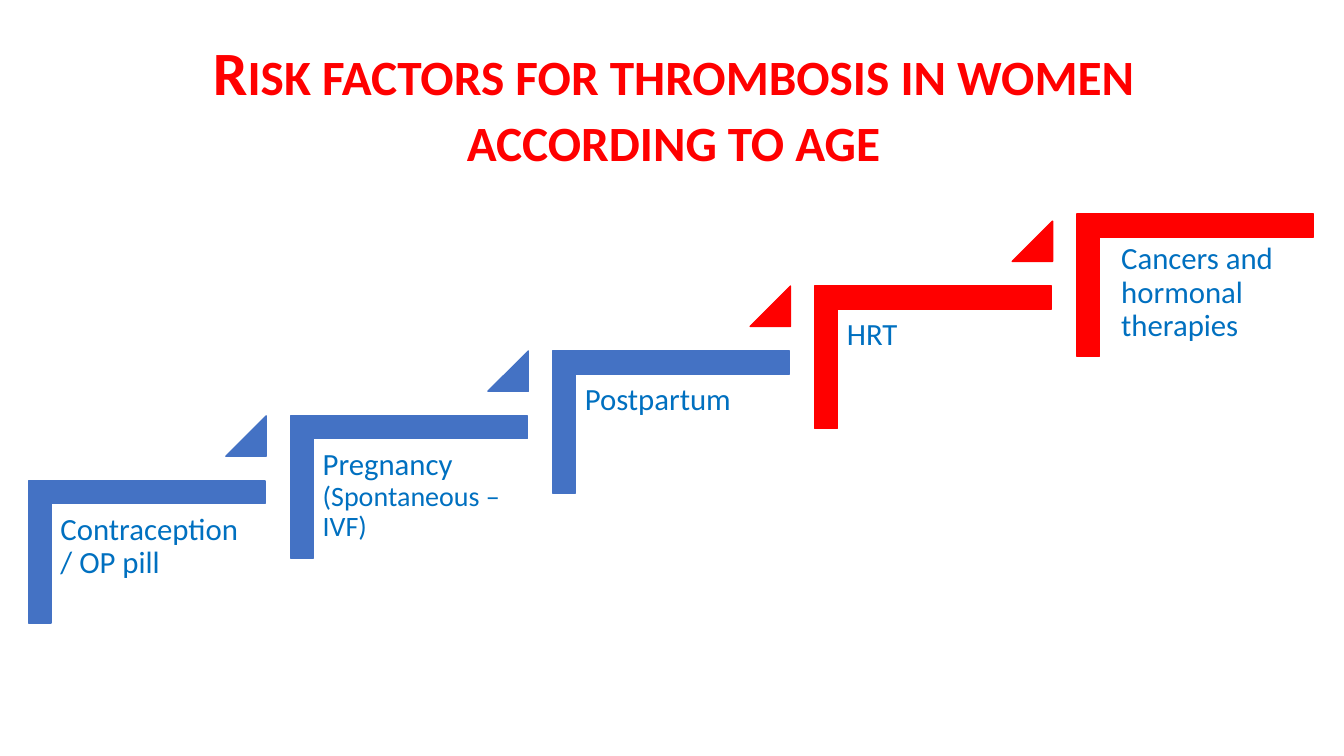
from pptx import Presentation
from pptx import util as u
from pptx.dml.color import RGBColor
from pptx.enum import shapes, text

RED, BLUE, LABEL = "FF0000", "4472C4", "0070C0"
STEP_W, STEP_H = 2.35, 1.41
COLUMN, RISE = 2.6, 0.644
LEFT, BOTTOM_STEP_TOP = 0.28, 4.77

# Label runs (text, size), step colour, colour of the triangle leading up
STEPS = [
    ([("Contraception / OP pill", 22)], BLUE, BLUE),
    ([("Pregnancy ", 22), ("(Spontaneous – IVF)", 20)], BLUE, BLUE),
    ([("Postpartum", 22)], BLUE, RED),
    ([("HRT", 22)], RED, RED),
    ([("Cancers and hormonal therapies", 22)], RED, None),
]


def rgb(value):
    return RGBColor.from_string(value)


def add_text(s, box, runs, color, inset=0.1):
    tb = s.shapes.add_textbox(*map(u.Inches, box))
    tf = tb.text_frame
    tf.word_wrap = True
    tf.margin_left = tf.margin_right = u.Inches(inset)
    tf.margin_top = tf.margin_bottom = u.Inches(inset)
    p = tf.paragraphs[0]
    p.line_spacing = 0.9
    for words, size in runs:
        r = p.add_run()
        r.text = words
        r.font.name, r.font.size = "Calibri", u.Pt(size)
        r.font.color.rgb = rgb(color)
    return tf


def add_solid(s, kind, box, color, adjustments):
    sp = s.shapes.add_shape(kind, *map(u.Inches, box))
    sp.shadow.inherit = False
    sp.fill.solid()
    sp.fill.fore_color.rgb = sp.line.color.rgb = rgb(color)
    sp.line.width = u.Pt(1)
    for i, value in enumerate(adjustments):
        sp.adjustments[i] = value
    return sp


def add_title(s, box):
    title = "Risk factors for thrombosis in women according to age"
    tf = add_text(s, box, [(title, 44)], RED)
    tf.margin_top = tf.margin_bottom = u.Inches(0.05)
    tf.vertical_anchor = text.MSO_ANCHOR.MIDDLE
    p = tf.paragraphs[0]
    p.alignment = text.PP_ALIGN.CENTER
    font = p.runs[0].font
    font.bold = True
    font._element.set("cap", "small")


def add_step(s, box, runs, color, next_color):
    """Draw one stair with its label, and the triangle towards the next."""
    x, y, w, h = box
    is_top = next_color is None
    if is_top:
        y -= 0.07
    # The corner shape is turned a quarter, so its sides swap about the centre
    turned = (x + (w - h) / 2, y + (h - w) / 2, h, w)
    corner = add_solid(s, shapes.MSO_SHAPE.CORNER, turned, color, [0.161, 0.161])
    corner.rotation = 90
    dx, dy, label_w = (0.35, 0.2, 2.01) if is_top else (0.23, 0.24, 2.12)
    add_text(s, (x + dx, y + dy, label_w, 1.86), runs, LABEL, 0.09)
    if not is_top:
        add_solid(s, shapes.MSO_SHAPE.ISOSCELES_TRIANGLE,
                  (x + 1.96, y - RISE, 0.4, 0.4), next_color, [1])


def add_staircase(s, left, top):
    for i, step in enumerate(STEPS):
        add_step(s, (left + i * COLUMN, top - i * RISE, STEP_W, STEP_H), *step)


def main():
    prs = Presentation()
    prs.slide_width, prs.slide_height = u.Inches(13.33), u.Inches(7.5)
    s = prs.slides.add_slide(prs.slide_layouts[6])
    add_title(s, (0.93, 0.35, 11.5, 1.45))
    add_staircase(s, LEFT, BOTTOM_STEP_TOP)
    prs.save("out.pptx")


if __name__ == "__main__":
    main()
